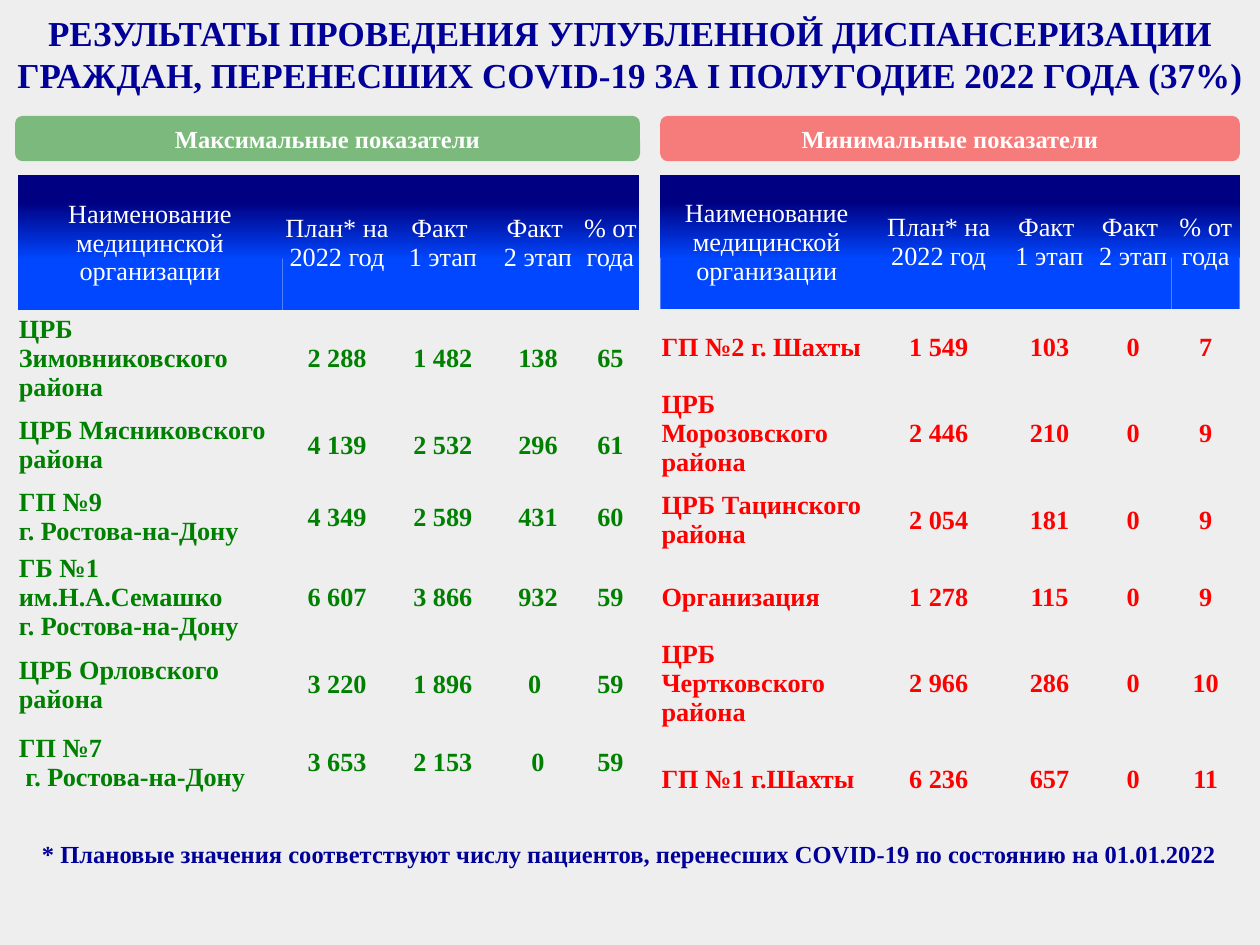
from pptx import Presentation
from pptx.dml.color import RGBColor
from pptx.enum.shapes import MSO_SHAPE
from pptx.enum.text import MSO_ANCHOR, PP_ALIGN
from pptx.oxml.ns import qn
from pptx.util import Inches, Pt
from lxml import etree

ROUNDED = MSO_SHAPE.ROUNDED_RECTANGLE
MIDDLE = MSO_ANCHOR.MIDDLE
CENTER = PP_ALIGN.CENTER
LEFT = PP_ALIGN.LEFT

FONT = "Times New Roman"
BACKGROUND = "EEEEEE"
NAVY = "000099"
WHITE = "FFFFFF"
GREEN = "008000"
RED = "FF0000"
HEADER_STOPS = [(0.37, "0047FF"), (0.8, "000082")]
NO_GRID_STYLE = "{2D5ABB26-0587-4C30-8999-92F81FD0307C}"

HEADINGS = [
    "Наименование медицинской организации",
    "План* на 2022 год",
    "Факт \n1 этап",
    "Факт \n2 этап",
    "% от года",
]
MAXIMUM_ROWS = [
    ["ЦРБ Зимовниковского района", "2 288", "1 482", "138", "65"],
    ["ЦРБ Мясниковского района", "4 139", "2 532", "296", "61"],
    ["ГП №9\nг. Ростова-на-Дону", "4 349", "2 589", "431", "60"],
    ["ГБ №1 им.Н.А.Семашко\nг. Ростова-на-Дону", "6 607", "3 866", "932", "59"],
    ["ЦРБ Орловского района", "3 220", "1 896", "0 ", "59"],
    ["ГП №7\n г. Ростова-на-Дону", "3 653", "2 153", "0", "59"],
]
MINIMUM_ROWS = [
    ["ГП №2 г. Шахты", "1 549", "103", "0", "7"],
    ["ЦРБ Морозовского района", "2 446", "210", "0", "9"],
    ["ЦРБ Тацинского района", "2 054", "181", "0", "9"],
    ["Организация", "1 278", "115", "0", "9"],
    ["ЦРБ Чертковского района", "2 966", "286", "0", "10"],
    ["ГП №1 г.Шахты", "6 236", "657", "0", "11"],
]


def rgb(color):
    """Turn a hex string into a colour."""
    return RGBColor.from_string(color)


def write(frame, text, size, color, bold=True, align=CENTER):
    """Put formatted text into a text frame."""
    frame.text = text
    frame.word_wrap = True
    for paragraph in frame.paragraphs:
        paragraph.alignment = align
        for run in paragraph.runs:
            run.font.name = FONT
            run.font.size = Pt(size)
            run.font.bold = bold
            run.font.color.rgb = rgb(color)


def add_caption(slide, left, top, width, height, text, size):
    """Add a centred navy line of text."""
    caption = slide.shapes.add_textbox(
        Inches(left), Inches(top), Inches(width), Inches(height))
    write(caption.text_frame, text, size, NAVY)


def add_banner(slide, left, width, text, color):
    """Add a translucent rounded heading above a table."""
    banner = slide.shapes.add_shape(
        ROUNDED, Inches(left), Inches(0.92), Inches(width), Inches(0.36))
    banner.shadow.inherit = False
    banner.line.fill.background()
    banner.fill.solid()
    banner.fill.fore_color.rgb = rgb(color)
    tint = banner.fill._xPr.find(".//" + qn("a:srgbClr"))
    etree.SubElement(tint, qn("a:alpha"), val="48000")
    banner.text_frame.vertical_anchor = MIDDLE
    write(banner.text_frame, text, 14, WHITE)


def fill_header(cell):
    """Give a header cell its vertical blue gradient."""
    cell.fill.gradient()
    cell.fill.gradient_angle = 90
    for stop, (position, color) in zip(cell.fill.gradient_stops, HEADER_STOPS):
        stop.position = position
        stop.color.rgb = rgb(color)


def fill_cell(cell, text, color, is_header, align):
    """Write one table cell and set its margins and fill."""
    cell.margin_left = cell.margin_right = cell.margin_top = Inches(0.01)
    cell.margin_bottom = 0
    cell.vertical_anchor = MIDDLE
    if is_header:
        fill_header(cell)
    else:
        cell.fill.background()
    write(cell.text_frame, text, 15, color, not is_header, align)


def add_indicator_table(slide, left, widths, heights, rows, color):
    """Add a table of indicators under the shared headings."""
    table = slide.shapes.add_table(
        len(heights), len(widths), Inches(left), Inches(1.39),
        Inches(sum(widths)), Inches(sum(heights))).table
    table.first_row = table.horz_banding = False
    table._tbl.tblPr.find(qn("a:tableStyleId")).text = NO_GRID_STYLE
    for column, width in zip(table.columns, widths):
        column.width = Inches(width)
    for row, height in zip(table.rows, heights):
        row.height = Inches(height)
    for row_index, texts in enumerate([HEADINGS] + rows):
        is_header = row_index == 0
        for column_index, text in enumerate(texts):
            align = CENTER if is_header or column_index else LEFT
            fill_cell(table.cell(row_index, column_index), text,
                      WHITE if is_header else color, is_header, align)


def main():
    """Build the slide and save it."""
    deck = Presentation()
    deck.slide_width, deck.slide_height = Inches(10), Inches(7.5)
    slide = deck.slides.add_slide(deck.slide_layouts[6])
    slide.background.fill.solid()
    slide.background.fill.fore_color.rgb = rgb(BACKGROUND)

    add_caption(slide, 0, 0.04, 10, 1.11,
                "РЕЗУЛЬТАТЫ ПРОВЕДЕНИЯ УГЛУБЛЕННОЙ ДИСПАНСЕРИЗАЦИИ ГРАЖДАН, "
                "ПЕРЕНЕСШИХ COVID-19 ЗА I ПОЛУГОДИЕ 2022 ГОДА (37%)", 20)
    add_indicator_table(slide, 5.24, [1.69, 1.04, 0.72, 0.61, 0.54],
                        [1.06, 0.61, 0.76, 0.61, 0.61, 0.76, 0.76],
                        MINIMUM_ROWS, RED)
    add_indicator_table(slide, 0.14, [2.1, 0.87, 0.81, 0.7, 0.45],
                        [1.07, 0.76, 0.62, 0.52, 0.76, 0.62, 0.62],
                        MAXIMUM_ROWS, GREEN)
    add_banner(slide, 5.24, 4.6, "Минимальные показатели", RED)
    add_banner(slide, 0.12, 4.96, "Максимальные показатели", GREEN)
    add_caption(slide, 0.16, 6.61, 9.67, 0.34,
                "* Плановые значения соответствуют числу пациентов, "
                "перенесших COVID-19 по состоянию на 01.01.2022", 14)
    deck.save("out.pptx")


if __name__ == "__main__":
    main()
